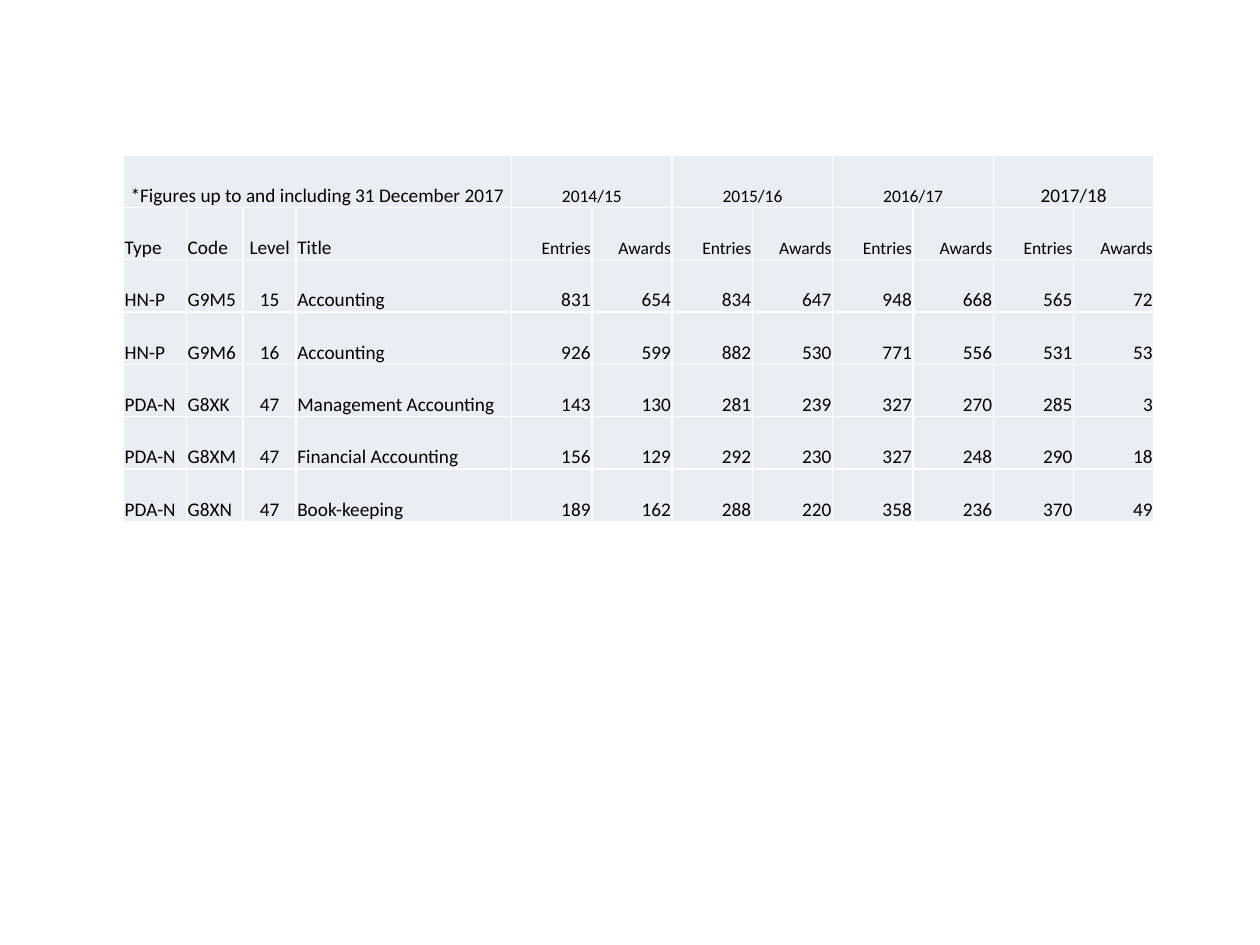
from lxml import etree
from pptx import Presentation
from pptx.dml.color import RGBColor
from pptx.enum.text import MSO_ANCHOR, PP_ALIGN
from pptx.oxml.ns import qn
from pptx.util import Inches, Pt

LEFT, CENTER, RIGHT = PP_ALIGN.LEFT, PP_ALIGN.CENTER, PP_ALIGN.RIGHT
BLACK = RGBColor(0x00, 0x00, 0x00)
PALE_BLUE = RGBColor(0xE9, 0xED, 0xF4)
WHITE = RGBColor(0xFF, 0xFF, 0xFF)

# Content
NOTE = "*Figures up to and including 31 December 2017"
YEARS = ["2014/15", "2015/16", "2016/17", "2017/18"]
LABELS = ["Type", "Code", "Level", "Title"]
MEASURES = ["Entries", "Awards"]
COURSES = [
    ("HN-P", "G9M5", 15, "Accounting", 831, 654, 834, 647, 948, 668, 565, 72),
    ("HN-P", "G9M6", 16, "Accounting", 926, 599, 882, 530, 771, 556, 531, 53),
    ("PDA-N", "G8XK", 47, "Management Accounting", 143, 130, 281, 239, 327, 270, 285, 3),
    ("PDA-N", "G8XM", 47, "Financial Accounting", 156, 129, 292, 230, 327, 248, 290, 18),
    ("PDA-N", "G8XN", 47, "Book-keeping", 189, 162, 288, 220, 358, 236, 370, 49),
]

# Grid
TABLE_LEFT, TABLE_TOP, TABLE_WIDTH, TABLE_HEIGHT = 0.98, 1.23, 8.18, 2.91
LABEL_WIDTHS = [0.5, 0.45, 0.42, 1.71]
FIGURE_COLS = len(YEARS) * len(MEASURES)
FIGURE_WIDTH = (TABLE_WIDTH - sum(LABEL_WIDTHS)) / FIGURE_COLS
WIDTHS = LABEL_WIDTHS + [FIGURE_WIDTH] * FIGURE_COLS
ALIGNS = [LEFT, LEFT, CENTER, LEFT] + [RIGHT] * FIGURE_COLS
BODY_SIZE, SMALL_SIZE = 11, 10
CELL_FORMAT = {
    "margin_left": Inches(0.01),
    "margin_top": Inches(0.01),
    "margin_right": Inches(0.01),
    "margin_bottom": 0,
    "vertical_anchor": MSO_ANCHOR.BOTTOM,
}


def style_cell(cell):
    for name, value in CELL_FORMAT.items():
        setattr(cell, name, value)
    tc_pr = cell._tc.get_or_add_tcPr()
    for side in ("lnL", "lnR", "lnT", "lnB"):
        line = etree.SubElement(tc_pr, qn(f"a:{side}"), w=str(Pt(1)))
        fill = etree.SubElement(line, qn("a:solidFill"))
        etree.SubElement(fill, qn("a:srgbClr"), val=str(WHITE))
    cell.fill.solid()
    cell.fill.fore_color.rgb = PALE_BLUE


def write(cell, text, align, size=BODY_SIZE):
    p = cell.text_frame.paragraphs[0]
    p.alignment = align
    r = p.add_run()
    r.text = str(text)
    font_format = {"name": "Calibri", "size": Pt(size), "bold": False}
    for name, value in font_format.items():
        setattr(r.font, name, value)
    r.font.color.rgb = BLACK


prs = Presentation()
prs.slide_width, prs.slide_height = Inches(10), Inches(7.5)
s = prs.slides.add_slide(prs.slide_layouts[6])

# Table frame
row_count = len(COURSES) + 2
table = s.shapes.add_table(
    row_count, len(WIDTHS), Inches(TABLE_LEFT), Inches(TABLE_TOP),
    Inches(TABLE_WIDTH), Inches(TABLE_HEIGHT)).table
table.first_row = table.horz_banding = False
for column, width in zip(table.columns, WIDTHS):
    column.width = Inches(width)
for row in table.rows:
    row.height = Inches(TABLE_HEIGHT / row_count)
for cell in table.iter_cells():
    style_cell(cell)

# Top row: the note over the labels, each year over its measures
spans = [(NOTE, len(LABELS), BODY_SIZE)]
spans += [(year, len(MEASURES), SMALL_SIZE) for year in YEARS[:-1]]
spans.append((YEARS[-1], len(MEASURES), BODY_SIZE))
col = 0
for text, span, size in spans:
    table.cell(0, col).merge(table.cell(0, col + span - 1))
    write(table.cell(0, col), text, CENTER, size)
    col += span

# Column headings and course figures
for i, values in enumerate([LABELS + MEASURES * len(YEARS)] + COURSES, start=1):
    for j, (value, align) in enumerate(zip(values, ALIGNS)):
        small = i == 1 and j >= len(LABELS)
        write(table.cell(i, j), value, align, SMALL_SIZE if small else BODY_SIZE)

prs.save("out.pptx")
